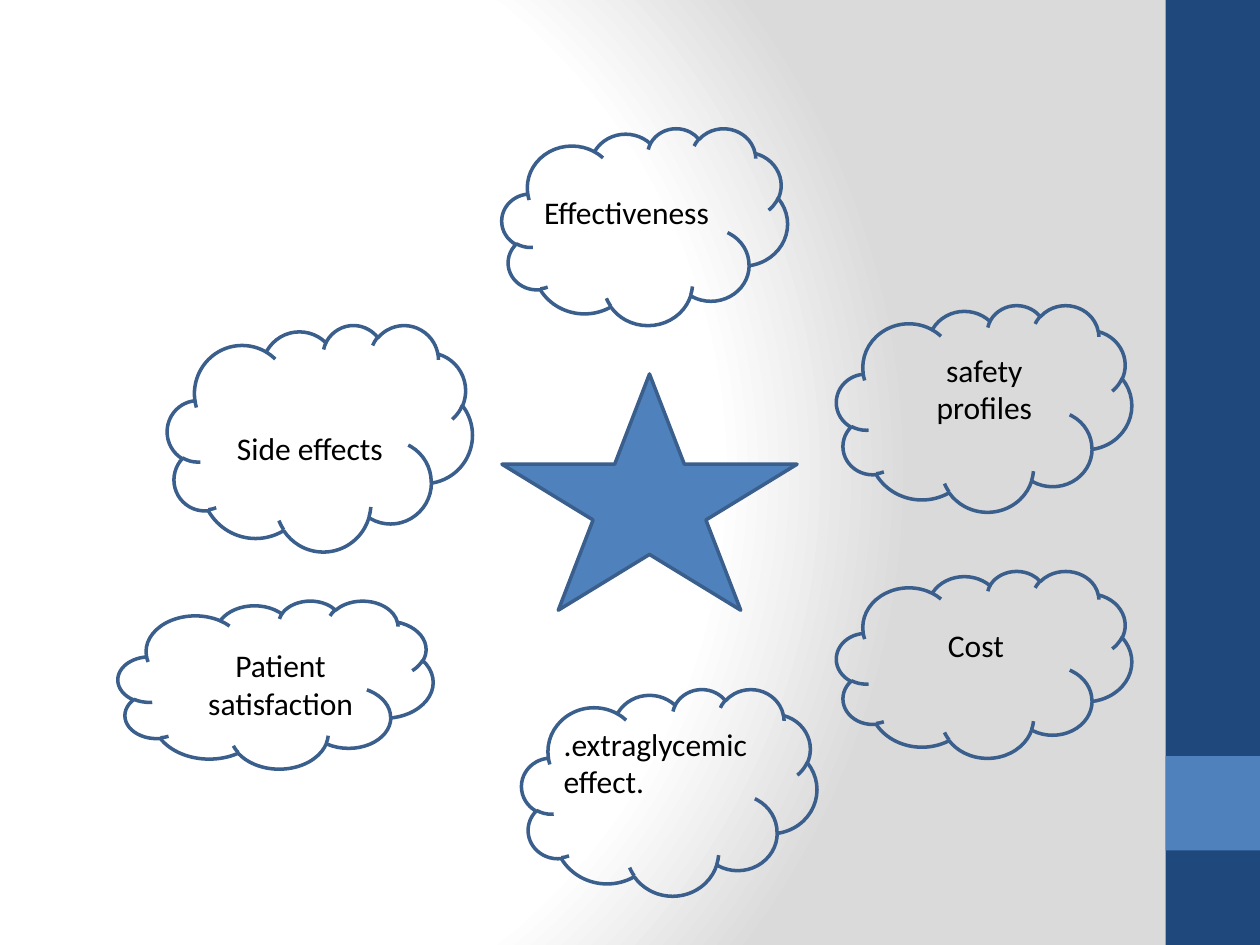
from pptx import Presentation
from pptx import util as u
from pptx.dml.color import RGBColor
from pptx.enum import shapes, text
from pptx.oxml import parse_xml
from pptx.oxml.ns import nsdecls

Pt = u.Pt
NAVY = RGBColor(0x1F, 0x49, 0x7D)
BLUE = RGBColor(0x4F, 0x81, 0xBD)
OUTLINE = RGBColor(0x3A, 0x5F, 0x8C)
WHITE = RGBColor(0xFF, 0xFF, 0xFF)
GRAY = RGBColor(0xDA, 0xDA, 0xDA)
BLACK = RGBColor(0, 0, 0)

LEFT, CENTER = text.PP_ALIGN.LEFT, text.PP_ALIGN.CENTER
SLIDE_WIDTH, SLIDE_HEIGHT, BAR_WIDTH = 720, 540, 54
FONT = {"name": "Calibri", "size": Pt(18)}
FRAME = {"word_wrap": True, "auto_size": text.MSO_AUTO_SIZE.SHAPE_TO_FIT_TEXT}

CRITERIA = [
    ("Patient satisfaction", CENTER, (67.5, 343.2, 180, 96), (101.3, 365.6, 118.1, 50.9)),
    ("Cost ", CENTER, (478, 326.2, 168.7, 106.8), (517.5, 354.4, 84.4, 29)),
    ("Effectiveness", LEFT, (286.8, 73.2, 163.2, 112.5), (303.8, 106.8, 129.4, 29)),
    ("safety profiles", CENTER, (478, 174.3, 168.7, 118.1), (506.2, 196.8, 112.5, 72.7)),
    ("Side effects", CENTER, (95.6, 185.6, 174.3, 129.4), (106.8, 241.8, 140.6, 29)),
    (".extraglycemic effect.", LEFT, (298.1, 393.7, 168.7, 118.1), (315, 410.6, 140.6, 50.9)),
]


def set_background(slide):
    fill = slide.background.fill
    fill.gradient()
    gradient = slide.element.xpath(".//a:gradFill")[0]
    stops = "".join(
        f'<a:gs pos="{position * 1000}"><a:srgbClr val="{color}"/></a:gs>'
        for position, color in ((0, WHITE), (75, WHITE), (100, GRAY))
    )
    gradient.getparent().replace(gradient, parse_xml(
        f'<a:gradFill rotWithShape="1" {nsdecls("a")}><a:gsLst>{stops}</a:gsLst>'
        '<a:path path="circle"><a:fillToRect l="20000" t="50000" r="100000" b="50000"/>'
        '</a:path></a:gradFill>'
    ))


def add_shape(slide, kind, box, fill=None, line=None):
    shape = slide.shapes.add_shape(kind, *map(Pt, box))
    shape.shadow.inherit = False
    if fill is None:
        shape.fill.background()
    else:
        shape.fill.solid()
        shape.fill.fore_color.rgb = fill
    if line is None:
        shape.line.fill.background()
    else:
        shape.line.color.rgb = line
        shape.line.width = Pt(2)


def add_label(slide, wording, alignment, box):
    frame = slide.shapes.add_textbox(*map(Pt, box)).text_frame
    for name, value in FRAME.items():
        setattr(frame, name, value)
    paragraph = frame.paragraphs[0]
    paragraph.alignment = alignment
    run = paragraph.add_run()
    run.text = wording
    for name, value in FONT.items():
        setattr(run.font, name, value)
    run.font.color.rgb = BLACK


def main():
    presentation = Presentation()
    presentation.slide_width = Pt(SLIDE_WIDTH)
    presentation.slide_height = Pt(SLIDE_HEIGHT)
    slide = presentation.slides.add_slide(presentation.slide_layouts[6])
    kinds = shapes.MSO_SHAPE
    bar_left = SLIDE_WIDTH - BAR_WIDTH

    set_background(slide)
    add_shape(slide, kinds.RECTANGLE, (bar_left, 0, BAR_WIDTH, SLIDE_HEIGHT), NAVY)
    add_shape(slide, kinds.RECTANGLE, (bar_left, 432, BAR_WIDTH, BAR_WIDTH), BLUE)
    for _, _, cloud_box, _ in CRITERIA:
        add_shape(slide, kinds.CLOUD, cloud_box, line=OUTLINE)
    for wording, alignment, _, label_box in CRITERIA:
        add_label(slide, wording, alignment, label_box)
    add_shape(slide, kinds.STAR_5_POINT, (286.8, 213.7, 168.7, 135), BLUE, OUTLINE)
    presentation.save("out.pptx")


if __name__ == "__main__":
    main()
